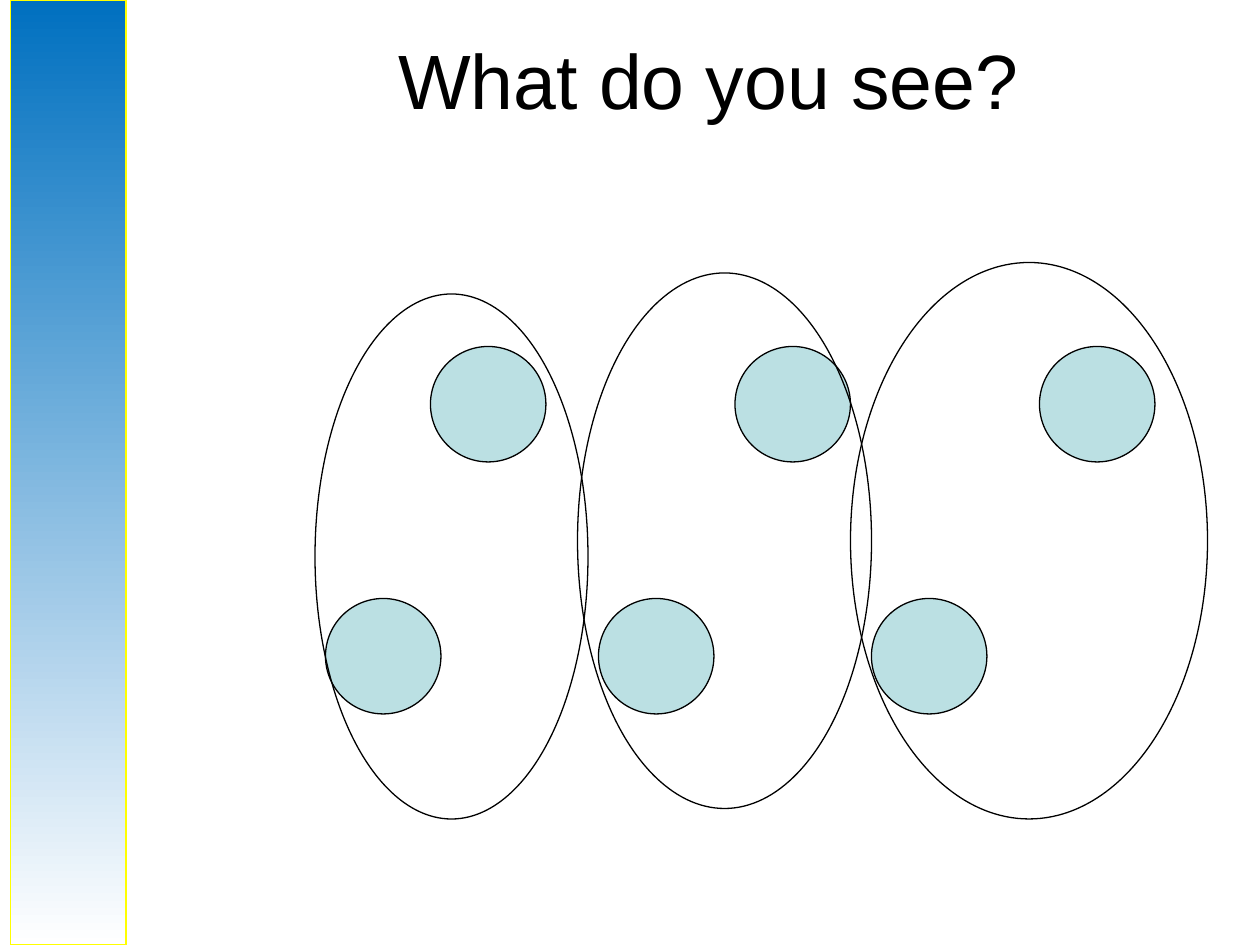
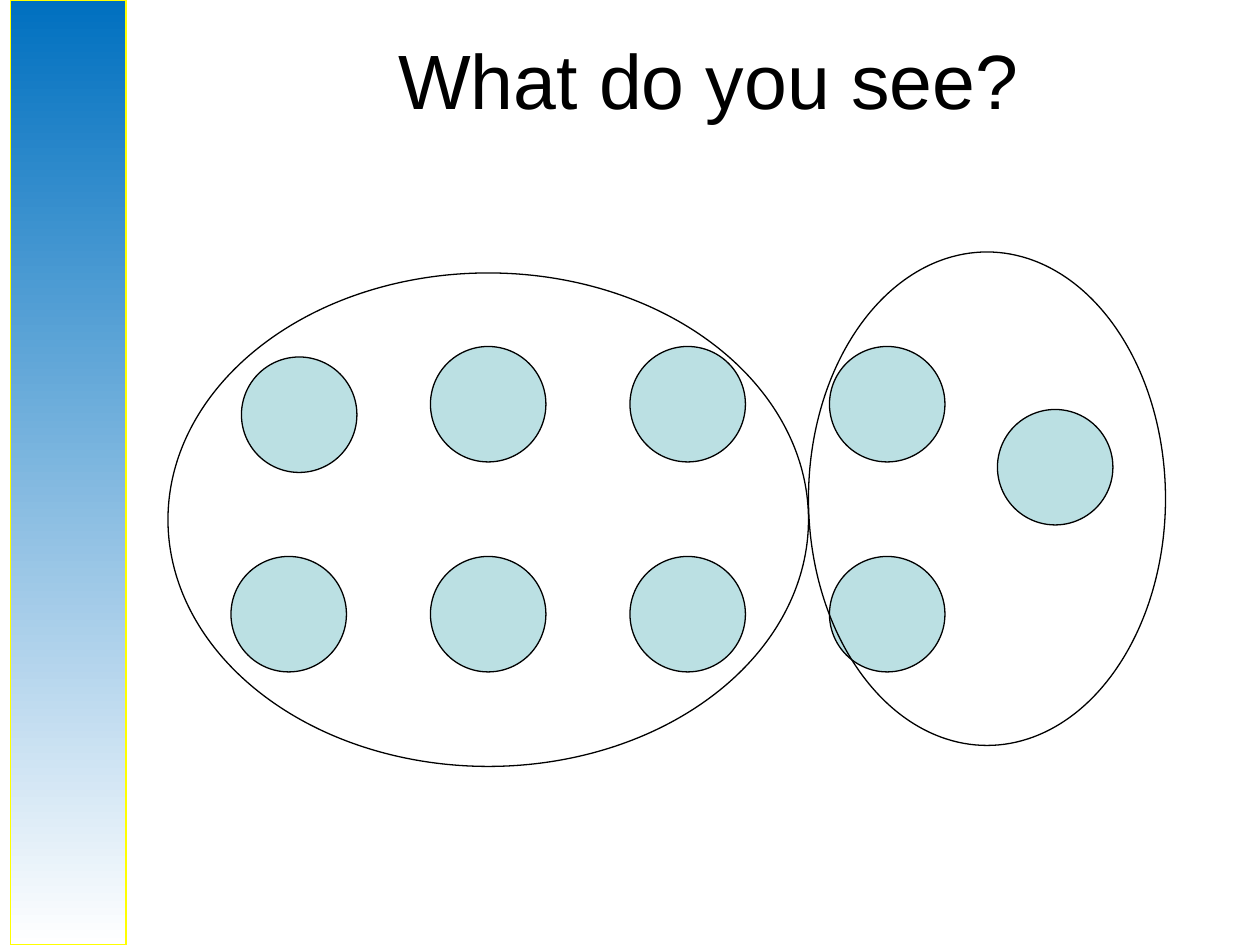
from pptx import Presentation
from pptx.dml.color import RGBColor
from pptx.enum.shapes import MSO_SHAPE
from pptx.enum.text import MSO_ANCHOR, PP_ALIGN
from pptx.util import Cm, Pt

BLACK = RGBColor(0x00, 0x00, 0x00)
WHITE = RGBColor(0xFF, 0xFF, 0xFF)
BLUE = RGBColor(0x00, 0x70, 0xC0)
YELLOW = RGBColor(0xFF, 0xFF, 0x00)
PALE_TEAL = RGBColor(0xBB, 0xE0, 0xE3)

GRID = Cm(2.54 / 12)
DOT_SIZE = 11
TITLE_ONLY = 5
BAND_ID = 20
BAND_BOX = (1, 0, 11, 90)
TITLE_BOX = (15, 0, 105, 15)
TITLE_TEXT = "What do you see?"
TITLE_FONT = {"name": "Arial", "size": Pt(44), "bold": False}

PAIRS_OF_DOTS = {
    "origin": (30, 25),
    "dots": [(11 + 29 * column, 8) for column in range(3)]
    + [(1 + 26 * column, 32) for column in range(3)],
    "loops": [(0, 3, 26, 50), (25, 1, 28, 51), (51, 0, 34, 53)],
}
SIX_AND_THREE_DOTS = {
    "origin": (16, 24),
    "dots": [(25 + 19 * column, 9) for column in range(3)]
    + [(6 + 19 * column, 29) for column in range(4)]
    + [(7, 10), (79, 15)],
    "loops": [(61, 0, 34, 47), (0, 2, 61, 47)],
}


def apply_format(target, values):
    """Set each attribute of the target from a dict."""
    for name, value in values.items():
        setattr(target, name, value)


def to_lengths(box):
    """Turn a box counted in grid steps into lengths."""
    return [GRID * steps for steps in box]


def add_outlined(shapes, kind, box, line_color):
    """Add a preset shape with a thin line and no shadow."""
    shape = shapes.add_shape(kind, *to_lengths(box))
    shape.shadow.inherit = False
    shape.line.color.rgb = line_color
    shape.line.width = Pt(0.75)
    return shape


def add_side_band(slide):
    """Draw the gradient band and hand it to the layout that the slides share."""
    band = add_outlined(slide.shapes, MSO_SHAPE.RECTANGLE, BAND_BOX, YELLOW)
    band.fill.gradient()
    band.fill.gradient_angle = 270
    for stop, color in zip(band.fill.gradient_stops, (BLUE, WHITE)):
        stop.color.rgb = color
    band.element.nvSpPr.cNvPr.id = BAND_ID
    slide.slide_layout.element.cSld.spTree.append(band.element)


def format_title(title, box):
    """Place the title placeholder in its box and style its text."""
    apply_format(title, dict(zip(("left", "top", "width", "height"), to_lengths(box))))
    title.text_frame.text = TITLE_TEXT
    title.text_frame.vertical_anchor = MSO_ANCHOR.MIDDLE
    paragraph = title.text_frame.paragraphs[0]
    paragraph.alignment = PP_ALIGN.CENTER
    font = paragraph.runs[0].font
    apply_format(font, TITLE_FONT)
    font.color.rgb = BLACK


def add_dot_groups(slide, origin, dots, loops):
    """Draw dots and the loops around them, measured from the origin."""
    left, top = origin
    shapes = slide.shapes.add_group_shape().shapes
    for x, y in dots:
        box = (left + x, top + y, DOT_SIZE, DOT_SIZE)
        dot = add_outlined(shapes, MSO_SHAPE.OVAL, box, BLACK)
        dot.fill.solid()
        dot.fill.fore_color.rgb = PALE_TEAL
    for x, y, width, height in loops:
        box = (left + x, top + y, width, height)
        loop = add_outlined(shapes, MSO_SHAPE.OVAL, box, BLACK)
        loop.fill.background()


def main():
    """Build both slides and save the presentation."""
    presentation = Presentation()
    presentation.slide_width = Cm(25.4)
    presentation.slide_height = Cm(19.05)
    layout = presentation.slide_layouts[TITLE_ONLY]
    for arrangement in (PAIRS_OF_DOTS, SIX_AND_THREE_DOTS):
        slide = presentation.slides.add_slide(layout)
        format_title(slide.shapes.title, TITLE_BOX)
        add_dot_groups(slide, **arrangement)
    add_side_band(presentation.slides[0])
    presentation.save("out.pptx")


if __name__ == "__main__":
    main()
